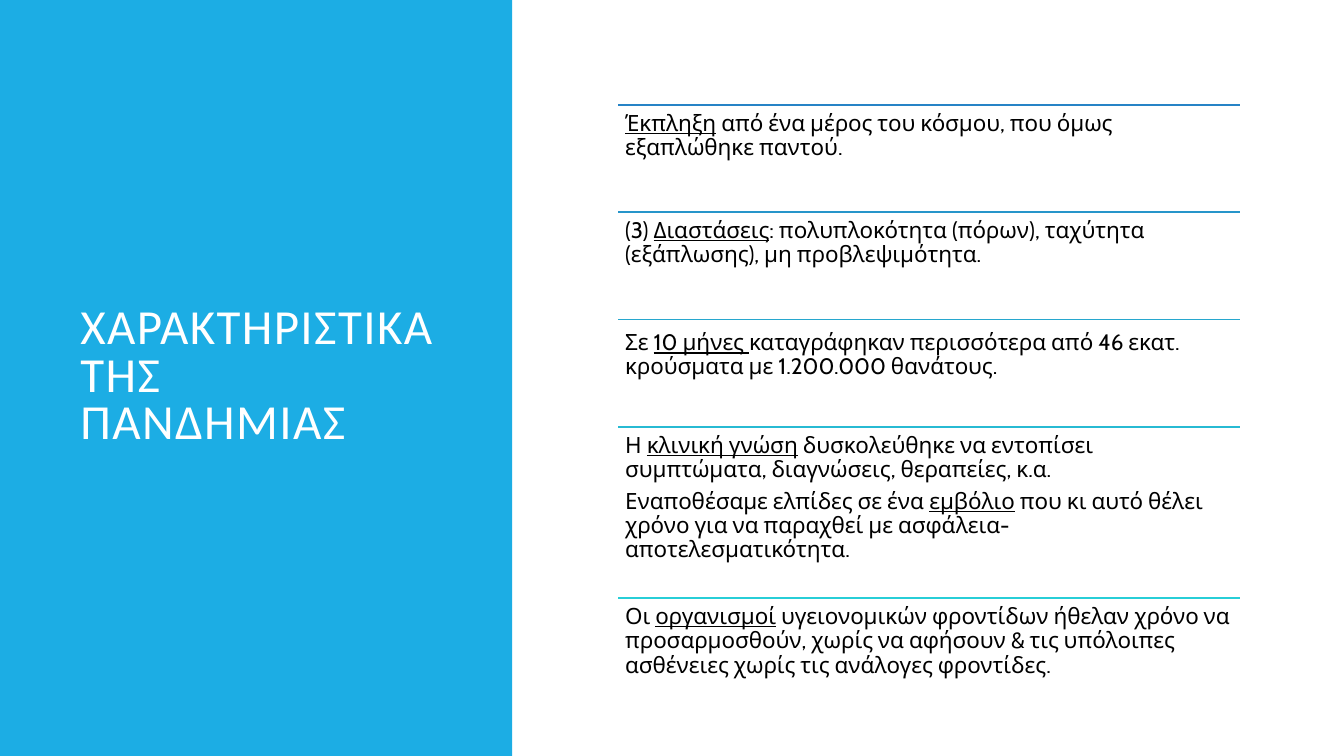
from lxml import etree
from pptx import Presentation, util as u
from pptx.dml.color import RGBColor
from pptx.enum import shapes, text
from pptx.oxml.ns import qn

COLORS = {"panel": "1CADE4", "title": "FFFFFF", "body": "000000"}
TITLE = "ΧΑΡΑΚΤΗΡΙΣΤΙΚΑ ΤΗΣ ΠΑΝΔΗΜΙΑΣ"

# Rule colour, grid units of height, text drop, paragraphs (underlined words between |)
ROWS = [
    ("2683C6", 5, 0, ["|Έκπληξη| από ένα μέρος του κόσμου, που όμως εξαπλώθηκε παντού."]),
    ("2695CA", 5, 0, ["(3) |Διαστάσεις|: πολυπλοκότητα (πόρων), ταχύτητα (εξάπλωσης), "
                      "μη προβλεψιμότητα."]),
    ("27A7CE", 5, 0.05, ["Σε |10 μήνες |καταγράφηκαν περισσότερα από 46 εκατ. κρούσματα "
                         "με 1.200.000 θανάτους."]),
    ("27BAD3", 8, 0, ["Η |κλινική γνώση| δυσκολεύθηκε να εντοπίσει συμπτώματα, διαγνώσεις, "
                      "θεραπείες, κ.α.",
                      "Εναποθέσαμε ελπίδες σε ένα |εμβόλιο| που κι αυτό θέλει χρόνο για να "
                      "παραχθεί με ασφάλεια-αποτελεσματικότητα."]),
    ("27CED7", 5, 0, ["Οι |οργανισμοί| υγειονομικών φροντίδων ήθελαν χρόνο να προσαρμοσθούν, "
                      "χωρίς να αφήσουν & τις υπόλοιπες ασθένειες χωρίς τις ανάλογες φροντίδες."]),
]


def rgb(value):
    return RGBColor.from_string(value)


def add_text_box(s, x, y, w, h, inset):
    tf = s.shapes.add_textbox(*map(u.Inches, (x, y, w, h))).text_frame
    tf.word_wrap = True
    tf.margin_left = tf.margin_right = tf.margin_top = tf.margin_bottom = u.Inches(inset)
    return tf


def style(p, name, size, color, spacing):
    p.line_spacing = spacing
    p.font.name, p.font.size = name, u.Pt(size)
    p.font.color.rgb = rgb(color)


def title_panel(s, x, y, w, h):
    # Coloured panel
    sp = s.shapes.add_shape(shapes.MSO_SHAPE.RECTANGLE, *map(u.Inches, (x, y, w, h)))
    sp.shadow.inherit = False
    sp.fill.solid()
    sp.fill.fore_color.rgb = rgb(COLORS["panel"])
    sp.line.fill.background()
    # Title, centred vertically
    margin = 0.7
    tf = add_text_box(s, x + margin, y + margin, w - 2 * margin + 0.06, h - 2 * margin, 0.1)
    tf.vertical_anchor = text.MSO_ANCHOR.MIDDLE
    p = tf.paragraphs[0]
    r = p.add_run()
    r.text = TITLE
    r.font._element.set("spc", "100")
    style(p, "Calibri", 35, COLORS["title"], 0.8)


def add_rule(s, x, y, w, color):
    line = s.shapes.add_connector(shapes.MSO_CONNECTOR.STRAIGHT,
                                  *map(u.Inches, (x, y, x + w, y)))
    line.line.color.rgb = rgb(color)
    line.line.width = u.Pt(1.25)
    etree.SubElement(line._element.spPr, qn("a:effectLst"))


def ruled_list(s, x, y, w, h):
    unit = h / sum(units for _, units, _, _ in ROWS)
    for color, units, drop, paragraphs in ROWS:
        add_rule(s, x, y, w, color)
        tf = add_text_box(s, x, y + drop, w, units * unit, 0.07)
        for i, content in enumerate(paragraphs):
            p = tf.add_paragraph() if i else tf.paragraphs[0]
            for j, part in enumerate(content.split("|")):
                if part:
                    r = p.add_run()
                    r.text = part
                    if j % 2:
                        r.font.underline = True
            p.space_after = u.Pt(5.6)
            style(p, "Cabin", 16, COLORS["body"], 0.9)
        y += units * unit


def main():
    prs = Presentation()
    prs.slide_width, prs.slide_height = u.Inches(13.33), u.Inches(7.5)
    s = prs.slides.add_slide(prs.slide_layouts[6])
    title_panel(s, 0, 0, 5.08, 7.5)
    ruled_list(s, 6.13, 1.04, 6.17, 5.96)
    prs.save("out.pptx")


if __name__ == "__main__":
    main()
